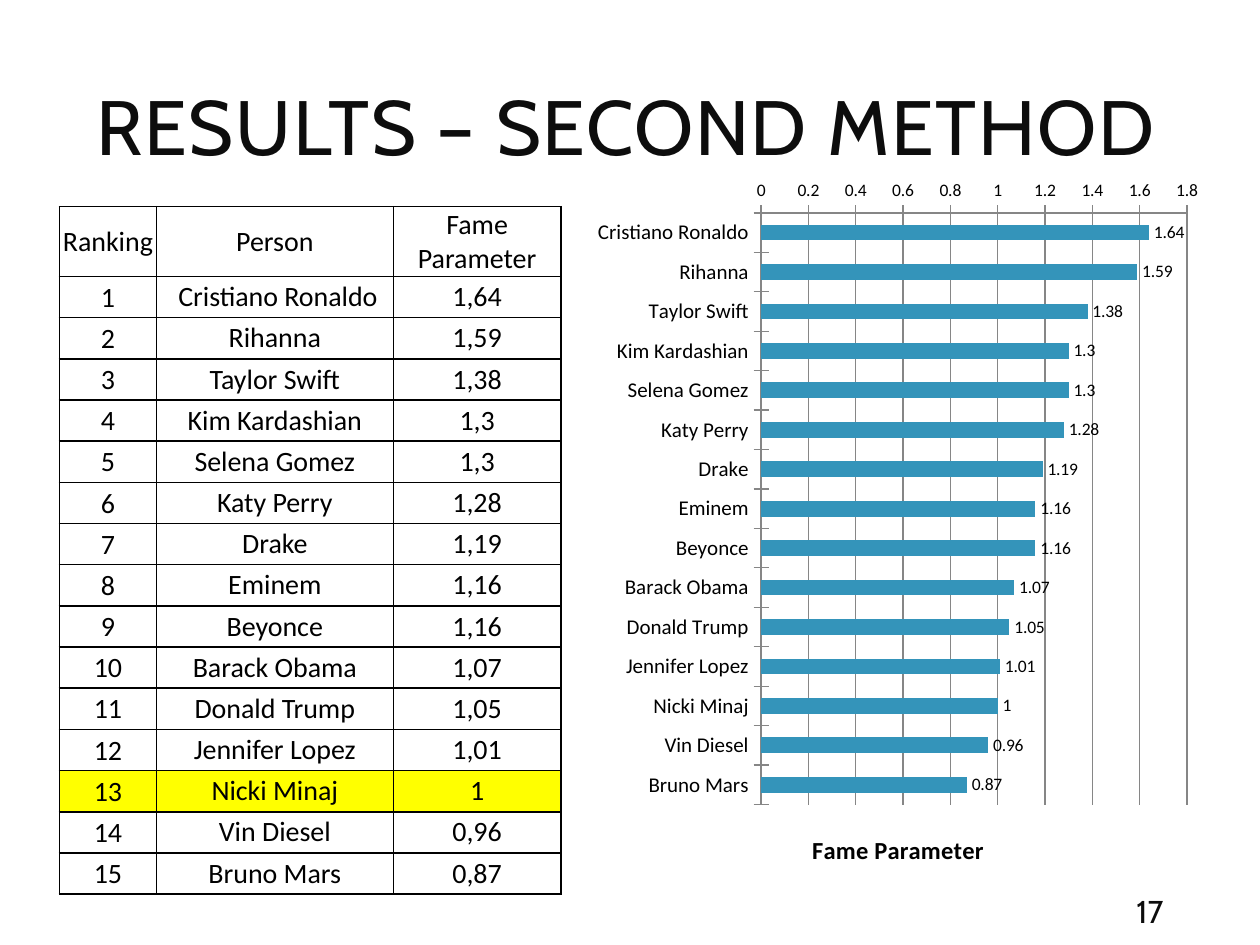
"""Build the "Results – Second Method" slide with a ranking table and a bar chart."""
from dataclasses import dataclass

from lxml import etree
from pptx import Presentation
from pptx import util as u
from pptx.chart.data import CategoryChartData
from pptx.dml.color import RGBColor
from pptx.enum import chart as charts, text
from pptx.oxml import parse_xml
from pptx.oxml.ns import nsdecls, qn


@dataclass(frozen=True)
class Theme:
    """Colours, fonts and type sizes of the slide."""
    ink: str = "0D0D0D"
    black: str = "000000"
    bar: str = "3494BA"
    grid: str = "868686"
    highlight: str = "FFFF00"
    display: str = "Cabin"
    body: str = "Calibri"
    title_size: float = 44
    number_size: float = 18
    table_size: float = 16
    axis_title_size: float = 14
    category_size: float = 12
    label_size: float = 10


@dataclass(frozen=True)
class Box:
    """A rectangle measured in points."""
    left: float
    top: float
    width: float
    height: float

    def lengths(self) -> list:
        """Return the four sides as slide lengths."""
        return [u.Pt(side) for side in (self.left, self.top, self.width, self.height)]


@dataclass(frozen=True)
class Person:
    """One ranked person."""
    name: str
    fame: float


THEME = Theme()
HEADINGS = ("Ranking", "Person", "Fame Parameter")
HIGHLIGHTED_RANK = 13
COLUMN_WIDTHS = (55.4, 135.4, 95.8)
HEADER_HEIGHT, ROW_HEIGHT = 40, 23.55
PEOPLE = [
    Person(" Cristiano Ronaldo", 1.64),
    Person("Rihanna", 1.59),
    Person("Taylor Swift", 1.38),
    Person("Kim Kardashian", 1.3),
    Person("Selena Gomez", 1.3),
    Person("Katy Perry", 1.28),
    Person("Drake", 1.19),
    Person("Eminem", 1.16),
    Person("Beyonce", 1.16),
    Person("Barack Obama", 1.07),
    Person("Donald Trump", 1.05),
    Person("Jennifer Lopez", 1.01),
    Person("Nicki Minaj", 1),
    Person("Vin Diesel", 0.96),
    Person("Bruno Mars", 0.87),
]


def set_font(font, size: float, color: str = THEME.black, name: str = THEME.body, bold: bool = False) -> None:
    """Apply typeface, size, weight and colour to a font."""
    font.name, font.size, font.bold = name, u.Pt(size), bold
    font.color.rgb = RGBColor.from_string(color)


def write_text(frame, content: str, *, align=text.PP_ALIGN.CENTER, line_spacing: float | None = None,
               tracking: float = 0, **font_format) -> None:
    """Write one formatted paragraph into a text frame."""
    paragraph = frame.paragraphs[0]
    paragraph.alignment, paragraph.line_spacing = align, line_spacing
    run = paragraph.add_run()
    run.text = content
    set_font(run.font, **font_format)
    if tracking:
        run.font._element.set("spc", str(round(tracking * 100)))


def add_label(slide, box: Box, content: str, **text_format) -> None:
    """Add a vertically centred text box."""
    frame = slide.shapes.add_textbox(*box.lengths()).text_frame
    frame.word_wrap = True
    frame.vertical_anchor = text.MSO_ANCHOR.MIDDLE
    frame.margin_left = frame.margin_right = u.Pt(9.4)
    frame.margin_top = frame.margin_bottom = u.Pt(5)
    write_text(frame, content, color=THEME.ink, name=THEME.display, **text_format)


def add_borders(cell, width: float = 1) -> None:
    """Draw a line on every side of a table cell."""
    properties = cell._tc.get_or_add_tcPr()
    for side in "LRTB":
        properties.append(parse_xml(
            f'<a:ln{side} {nsdecls("a")} w="{u.Pt(width)}"><a:solidFill>'
            f'<a:srgbClr val="{THEME.black}"/></a:solidFill></a:ln{side}>'))


def fill_cell(cell, content: str, inset: float, highlighted: bool) -> None:
    """Write and format one table cell."""
    cell.vertical_anchor = text.MSO_ANCHOR.MIDDLE
    cell.margin_left = cell.margin_right = cell.margin_top = u.Pt(inset)
    cell.margin_bottom = u.Pt(0)
    add_borders(cell)
    if highlighted:
        cell.fill.solid()
        cell.fill.fore_color.rgb = RGBColor.from_string(THEME.highlight)
    else:
        cell.fill.background()
    write_text(cell.text_frame, content, size=THEME.table_size)


def add_ranking(slide, left: float, top: float) -> None:
    """Add the ranking table."""
    rows = [HEADINGS] + [(str(rank), person.name, f"{person.fame:g}".replace(".", ","))
                         for rank, person in enumerate(PEOPLE, 1)]
    box = Box(left, top, sum(COLUMN_WIDTHS), HEADER_HEIGHT + ROW_HEIGHT * len(PEOPLE))
    table = slide.shapes.add_table(len(rows), len(HEADINGS), *box.lengths()).table
    table.first_row = table.horz_banding = False
    for column, width in zip(table.columns, COLUMN_WIDTHS):
        column.width = u.Pt(width)
    for rank, values in enumerate(rows):
        table.rows[rank].height = u.Pt(ROW_HEIGHT if rank else HEADER_HEIGHT)
        for column, content in enumerate(values):
            inset = 0 if rank and column else 0.7
            fill_cell(table.cell(rank, column), content, inset, rank == HIGHLIGHTED_RANK)


def place(element, index: int, **settings) -> None:
    """Give a chart part a manual layout."""
    for layout in element.findall(qn("c:layout")):
        element.remove(layout)
    layout = etree.Element(qn("c:layout"))
    manual = etree.SubElement(layout, qn("c:manualLayout"))
    for name, value in settings.items():
        etree.SubElement(manual, qn(f"c:{name}")).set("val", str(value))
    element.insert(index, layout)


def style_line(line) -> None:
    """Draw a thin grey chart line."""
    line.color.rgb = RGBColor.from_string(THEME.grid)
    line.width = u.Pt(0.75)


def add_fame_chart(slide, box: Box) -> None:
    """Add the bar chart of fame parameters."""
    data = CategoryChartData()
    data.categories = [person.name for person in PEOPLE]
    data.add_series("Series 1", [person.fame for person in PEOPLE])
    chart = slide.shapes.add_chart(charts.XL_CHART_TYPE.BAR_CLUSTERED, *box.lengths(), data).chart
    chart.has_legend = chart.has_title = False
    set_font(chart.font, THEME.label_size)

    plot = chart.plots[0]
    plot.gap_width, plot.vary_by_categories = 150, False
    fill = plot.series[0].format.fill
    fill.solid()
    fill.fore_color.rgb = RGBColor.from_string(THEME.bar)
    plot.has_data_labels = True
    plot.data_labels.show_value = True
    plot.data_labels.position = charts.XL_LABEL_POSITION.OUTSIDE_END
    set_font(plot.data_labels.font, THEME.label_size)

    names, values = chart.category_axis, chart.value_axis
    names.reverse_order = True
    for axis, size in ((names, THEME.category_size), (values, THEME.label_size)):
        axis.major_tick_mark = charts.XL_TICK_MARK.CROSS
        set_font(axis.tick_labels.font, size)
        style_line(axis.format.line)
    values.minimum_scale, values.maximum_scale, values.major_unit = 0, 1.8, 0.2
    values.has_major_gridlines = True
    style_line(values.major_gridlines.format.line)
    write_text(values.axis_title.text_frame, "Fame Parameter", size=THEME.axis_title_size, bold=True)
    place(values.axis_title._element, 1, xMode="edge", yMode="edge", x=0.36, y=0.92)
    place(chart.element.find(f".//{qn('c:plotArea')}"), 0, layoutTarget="inner",
          xMode="edge", yMode="edge", x=0.286, y=0.063, w=0.676, h=0.824)


def main() -> None:
    """Build and save the presentation."""
    presentation = Presentation()
    presentation.slide_width, presentation.slide_height = u.Pt(720), u.Pt(540)
    slide = presentation.slides.add_slide(presentation.slide_layouts[6])
    add_label(slide, Box(34, 34, 648, 84), "RESULTS – SECOND METHOD",
              size=THEME.title_size, line_spacing=0.8, tracking=1)
    add_ranking(slide, 34, 118)
    add_label(slide, Box(640, 510, 57.6, 21.6), "17", size=THEME.number_size, align=text.PP_ALIGN.LEFT)
    add_fame_chart(slide, Box(332, 95.8, 360, 410.4))
    presentation.save("out.pptx")


if __name__ == "__main__":
    main()
